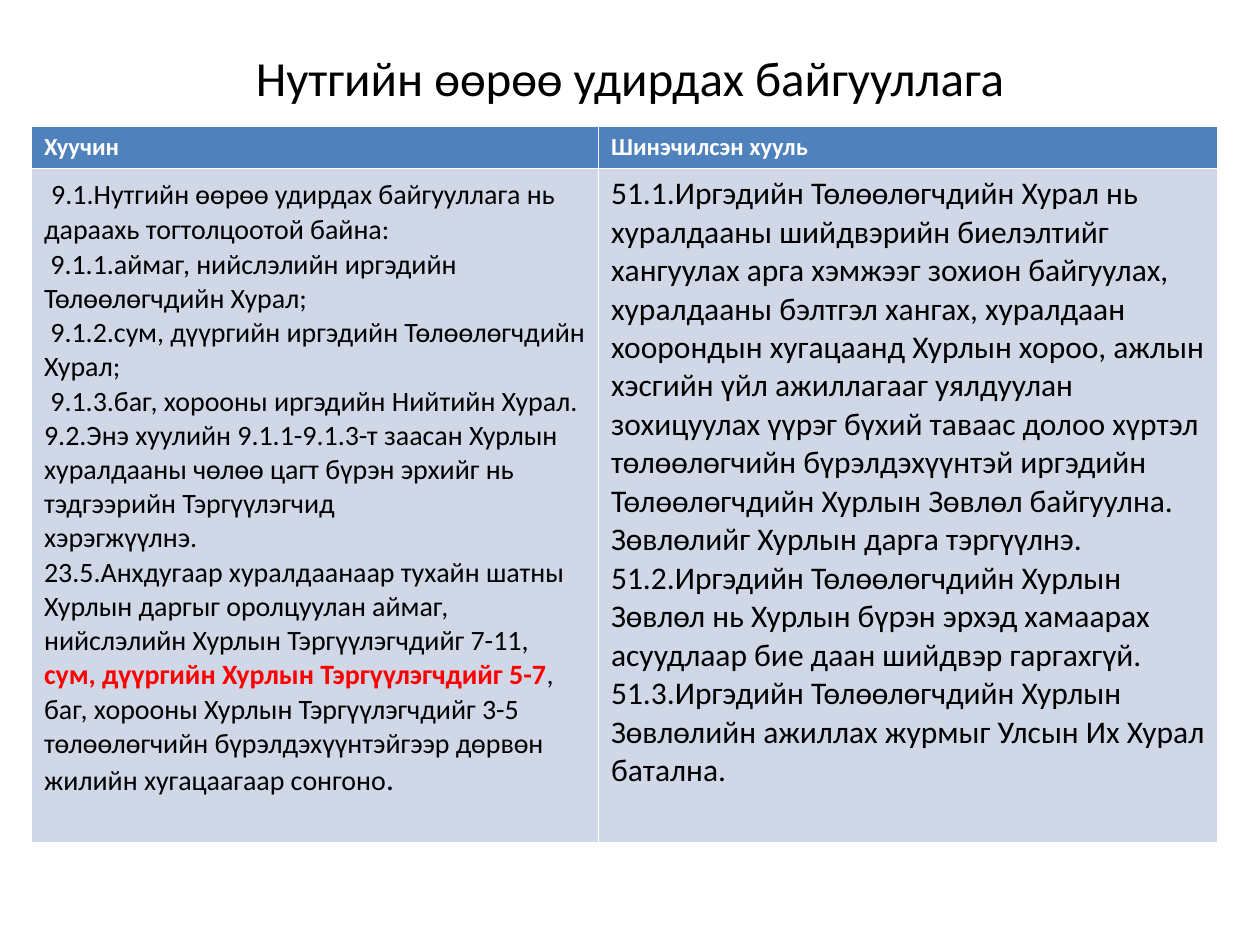
"""Build a slide comparing the old and revised laws on local self-government."""
import pptx
import pptx.dml.color
import pptx.enum.text
import pptx.util

Pt = pptx.util.Pt

FONT = "Calibri"
BLACK, WHITE, RED = "000000", "FFFFFF", "FF0000"
HEADER_FILL, BODY_FILL = "4F81BD", "D0D8E8"

TITLE = "Нутгийн өөрөө удирдах байгууллага"
HEADERS = ["Хуучин", "Шинэчилсэн хууль"]
OLD_LAW = [
    [(" ", 18), ("9.1.Нутгийн өөрөө удирдах байгууллага нь дараахь тогтолцоотой байна:", 16)],
    [(" 9.1.1.аймаг, нийслэлийн иргэдийн Төлөөлөгчдийн Хурал;", 16)],
    [(" 9.1.2.сум, дүүргийн иргэдийн Төлөөлөгчдийн Хурал;", 16)],
    [(" 9.1.3.баг, хорооны иргэдийн Нийтийн Хурал.", 16)],
    [("9.2.Энэ хуулийн 9.1.1-9.1.3-т заасан Хурлын хуралдааны чөлөө цагт бүрэн "
      "эрхийг нь тэдгээрийн Тэргүүлэгчид ", 16)],
    [("хэрэгжүүлнэ.", 16)],
    [("23.5.Анхдугаар хуралдаанаар тухайн шатны Хурлын даргыг оролцуулан аймаг, "
      "нийслэлийн Хурлын Тэргүүлэгчдийг 7-11, ", 16),
     ("сум, дүүргийн Хурлын Тэргүүлэгчдийг 5-7", 16, RED, True),
     (", баг, хорооны Хурлын Тэргүүлэгчдийг 3-5 төлөөлөгчийн бүрэлдэхүүнтэйгээр "
      "дөрвөн жилийн хугацаагаар сонгоно", 16),
     (".", 18)],
]
NEW_LAW = [
    [("51.1.Иргэдийн Төлөөлөгчдийн Хурал нь хуралдааны шийдвэрийн биелэлтийг "
      "хангуулах арга хэмжээг зохион байгуулах, хуралдааны бэлтгэл хангах, "
      "хуралдаан хоорондын хугацаанд Хурлын хороо, ажлын хэсгийн үйл ажиллагааг "
      "уялдуулан зохицуулах үүрэг бүхий таваас долоо хүртэл төлөөлөгчийн "
      "бүрэлдэхүүнтэй иргэдийн Төлөөлөгчдийн Хурлын Зөвлөл байгуулна. "
      "Зөвлөлийг Хурлын дарга тэргүүлнэ.", 18)],
    [("51.2.Иргэдийн Төлөөлөгчдийн Хурлын Зөвлөл нь Хурлын бүрэн эрхэд хамаарах "
      "асуудлаар бие даан шийдвэр гаргахгүй.", 18)],
    [("51.3.Иргэдийн Төлөөлөгчдийн Хурлын Зөвлөлийн ажиллах журмыг Улсын Их "
      "Хурал батална.", 18)],
]
ROWS = [
    (HEADER_FILL, [[[(text, 14, WHITE, True)]] for text in HEADERS]),
    (BODY_FILL, [OLD_LAW, NEW_LAW]),
]
COL_WIDTHS = [324, 354]
ROW_HEIGHTS = [23.5, 385.5]


def rgb(value):
    return pptx.dml.color.RGBColor.from_string(value)


def add_run(p, text, size, color=BLACK, bold=False):
    r = p.add_run()
    r.text = text
    r.font.name, r.font.size, r.font.bold = FONT, Pt(size), bold
    r.font.color.rgb = rgb(color)


def fill_cell(cell, paragraphs, color):
    cell.fill.solid()
    cell.fill.fore_color.rgb = rgb(color)
    tf = cell.text_frame
    for i, runs in enumerate(paragraphs):
        p = tf.add_paragraph() if i else tf.paragraphs[0]
        for run in runs:
            add_run(p, *run)


def add_title(s):
    sp = s.shapes.title
    sp.left, sp.top, sp.width, sp.height = Pt(36), Pt(21.6), Pt(648), Pt(44.6)
    tf = sp.text_frame
    tf.vertical_anchor = pptx.enum.text.MSO_ANCHOR.MIDDLE
    p = tf.paragraphs[0]
    p.alignment = pptx.enum.text.PP_ALIGN.CENTER
    add_run(p, TITLE, 28)


def add_law_table(s):
    table = s.shapes.add_table(len(ROWS), len(COL_WIDTHS), Pt(18), Pt(72),
                               Pt(sum(COL_WIDTHS)), Pt(sum(ROW_HEIGHTS))).table
    for column, width in zip(table.columns, COL_WIDTHS):
        column.width = Pt(width)
    for row, height, (color, cells) in zip(table.rows, ROW_HEIGHTS, ROWS):
        row.height = Pt(height)
        for cell, paragraphs in zip(row.cells, cells):
            fill_cell(cell, paragraphs, color)


def main():
    prs = pptx.Presentation()
    prs.slide_width, prs.slide_height = Pt(720), Pt(540)
    s = prs.slides.add_slide(prs.slide_layouts[5])
    add_title(s)
    add_law_table(s)
    prs.save("out.pptx")


if __name__ == "__main__":
    main()
